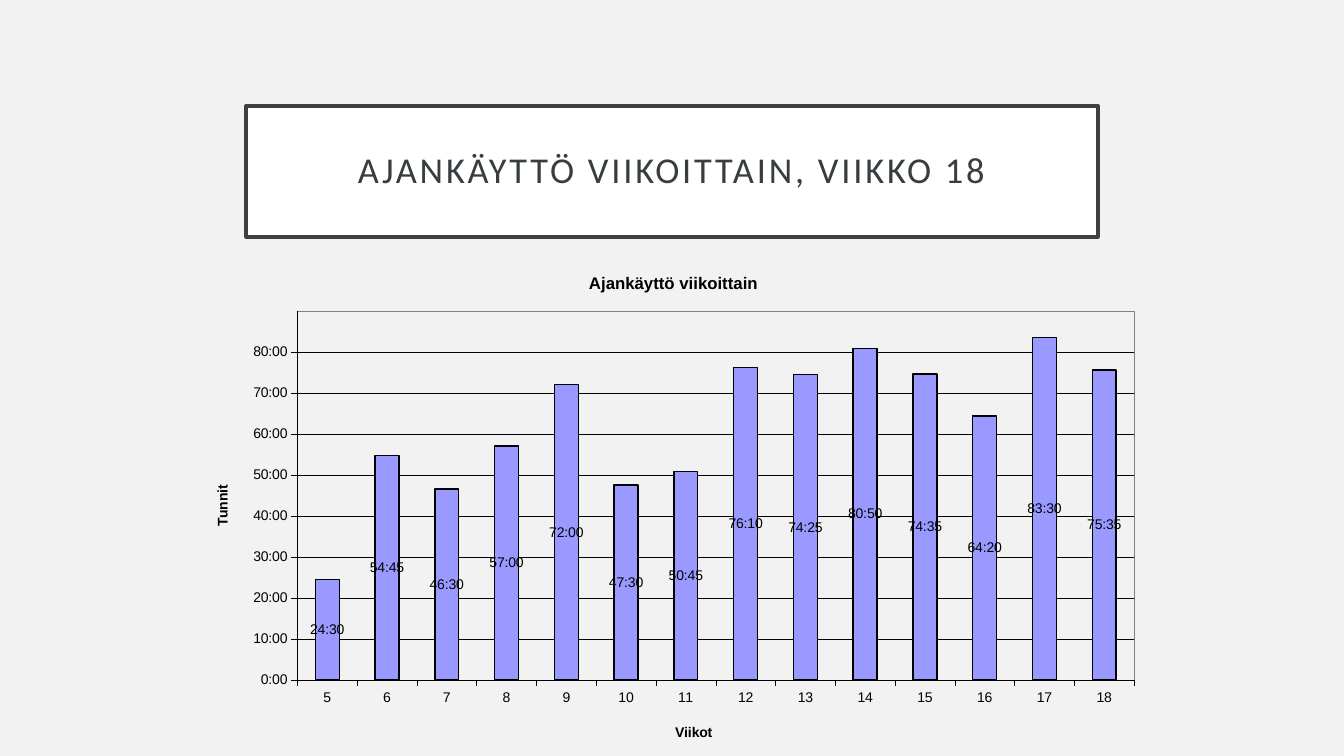
from lxml.etree import SubElement
from pptx import Presentation
from pptx.chart.data import CategoryChartData
from pptx.dml.color import RGBColor
from pptx.enum.chart import XL_CHART_TYPE, XL_LABEL_POSITION, XL_TICK_MARK
from pptx.enum.text import MSO_ANCHOR, PP_ALIGN
from pptx.oxml import parse_xml
from pptx.oxml.ns import nsdecls, qn
from pptx.util import Inches, Pt

COLORS = {
    "background": "F2F2F2",
    "box": "FFFFFF",
    "frame": "404040",
    "heading": "383E40",
    "ink": "000000",
    "bar": "9999FF",
    "plot_edge": "808080",
}
TIME_FORMAT = "[h]\\:mm"
FIRST_WEEK = 5
WEEKLY_TIMES = [
    "24:30", "54:45", "46:30", "57:00", "72:00", "47:30", "50:45",
    "76:10", "74:25", "80:50", "74:35", "64:20", "83:30", "75:35",
]


def rgb(name):
    """Return the named colour."""
    return RGBColor.from_string(COLORS[name])


def days(time):
    """Convert hours:minutes to a fraction of days."""
    hours, minutes = map(int, time.split(":"))
    return round((hours + minutes / 60) / 24, 6)


def style_line(line, color, width):
    """Set the colour and width of a line."""
    line.color.rgb = rgb(color)
    line.width = Pt(width)


def style_font(font, face, size, color, bold=False):
    """Set the look of a font."""
    font.name = face
    font.size = Pt(size)
    font.bold = bold
    font.color.rgb = rgb(color)


def manual_layout(x, y, size=None):
    """Build a chart layout placed by fractions of the chart area."""
    settings = {"xMode": "edge", "yMode": "edge", "x": x, "y": y}
    if size:
        settings = {"layoutTarget": "inner", **settings, "w": size[0], "h": size[1]}
    layout = parse_xml(f"<c:layout {nsdecls('c')}/>")
    manual = SubElement(layout, qn("c:manualLayout"))
    for tag, value in settings.items():
        SubElement(manual, qn(f"c:{tag}")).set("val", str(value))
    return layout


def add_heading(slide, text):
    """Format the framed title."""
    heading = slide.shapes.title
    heading.left, heading.top = Inches(2.44), Inches(1.05)
    heading.width, heading.height = Inches(8.45), Inches(1.3)
    heading.fill.solid()
    heading.fill.fore_color.rgb = rgb("box")
    style_line(heading.line, "frame", 2.5)
    frame = heading.text_frame
    frame.text = text
    frame.word_wrap = True
    frame.vertical_anchor = MSO_ANCHOR.MIDDLE
    frame.margin_left = frame.margin_right = Inches(0.2)
    frame.margin_top = frame.margin_bottom = Inches(0.2)
    paragraph = frame.paragraphs[0]
    paragraph.alignment = PP_ALIGN.CENTER
    paragraph.line_spacing = 0.9
    style_font(paragraph.font, "Calibri", 26, "heading")
    paragraph.runs[0].font._element.set("spc", "200")


def set_chart_title(title, text, size, x, y):
    """Write and place a title of the chart or an axis."""
    title.text_frame.text = text
    style_font(title.text_frame.paragraphs[0].font, "Arial", size, "ink", True)
    for layout in title._element.findall(qn("c:layout")):
        title._element.remove(layout)
    title._element.find(qn("c:tx")).addnext(manual_layout(x, y))


def style_axis(axis, text, x, y):
    """Set the title, ticks, line and font of an axis."""
    set_chart_title(axis.axis_title, text, 10, x, y)
    axis.major_tick_mark = XL_TICK_MARK.OUTSIDE
    axis.minor_tick_mark = XL_TICK_MARK.NONE
    style_line(axis.format.line, "ink", 0.25)
    style_font(axis.tick_labels.font, "Arial", 10, "ink")


def style_plot_area(chart):
    """Place the plot area and outline it."""
    area = chart._chartSpace.chart.plotArea
    for layout in area.findall(qn("c:layout")):
        area.remove(layout)
    area.insert(0, manual_layout(0.11, 0.12, (0.87, 0.73)))
    area.append(parse_xml(
        f'<c:spPr {nsdecls("c", "a")}><a:noFill/><a:ln w="3175"><a:solidFill>'
        f'<a:srgbClr val="{COLORS["plot_edge"]}"/></a:solidFill></a:ln></c:spPr>'
    ))


def style_bars(plot):
    """Set the bars and their labels."""
    plot.gap_width = 150
    plot.overlap = 100
    plot.vary_by_categories = False
    bars = plot.series[0]
    bars.format.fill.solid()
    bars.format.fill.fore_color.rgb = rgb("bar")
    style_line(bars.format.line, "ink", 1)
    labels = bars.data_labels
    labels.show_value = True
    labels.position = XL_LABEL_POSITION.CENTER
    labels.number_format = TIME_FORMAT
    labels.number_format_is_linked = False
    style_font(labels.font, "Arial", 10, "ink")


def add_time_chart(slide):
    """Add the column chart of weekly hours."""
    times = CategoryChartData(number_format=TIME_FORMAT)
    times.categories = [str(FIRST_WEEK + i) for i in range(len(WEEKLY_TIMES))]
    times.add_series("Series 1", [days(time) for time in WEEKLY_TIMES])
    chart = slide.shapes.add_chart(
        XL_CHART_TYPE.COLUMN_STACKED,
        Inches(1.9), Inches(2.48), Inches(9.54), Inches(5.02), times,
    ).chart
    chart.has_legend = False
    style_font(chart.font, "Arial", 10, "ink")
    set_chart_title(chart.chart_title, "Ajankäyttö viikoittain", 12, 0.41, 0.04)
    style_axis(chart.category_axis, "Viikot", 0.5, 0.93)
    hours = chart.value_axis
    style_axis(hours, "Tunnit", 0.02, 0.46)
    hours.minimum_scale = 0
    hours.maximum_scale = days("90:00")
    hours.major_unit = days("10:00")
    hours.tick_labels.number_format = TIME_FORMAT
    hours.tick_labels.number_format_is_linked = False
    style_line(hours.major_gridlines.format.line, "ink", 0.25)
    style_plot_area(chart)
    style_bars(chart.plots[0])


def main():
    """Build and save the slide."""
    deck = Presentation()
    deck.slide_width, deck.slide_height = Inches(13.33), Inches(7.5)
    slide = deck.slides.add_slide(deck.slide_layouts[5])
    slide.background.fill.solid()
    slide.background.fill.fore_color.rgb = rgb("background")
    add_heading(slide, "AJANKÄYTTÖ VIIKOITTAIN, VIIKKO 18")
    add_time_chart(slide)
    deck.save("out.pptx")


if __name__ == "__main__":
    main()
